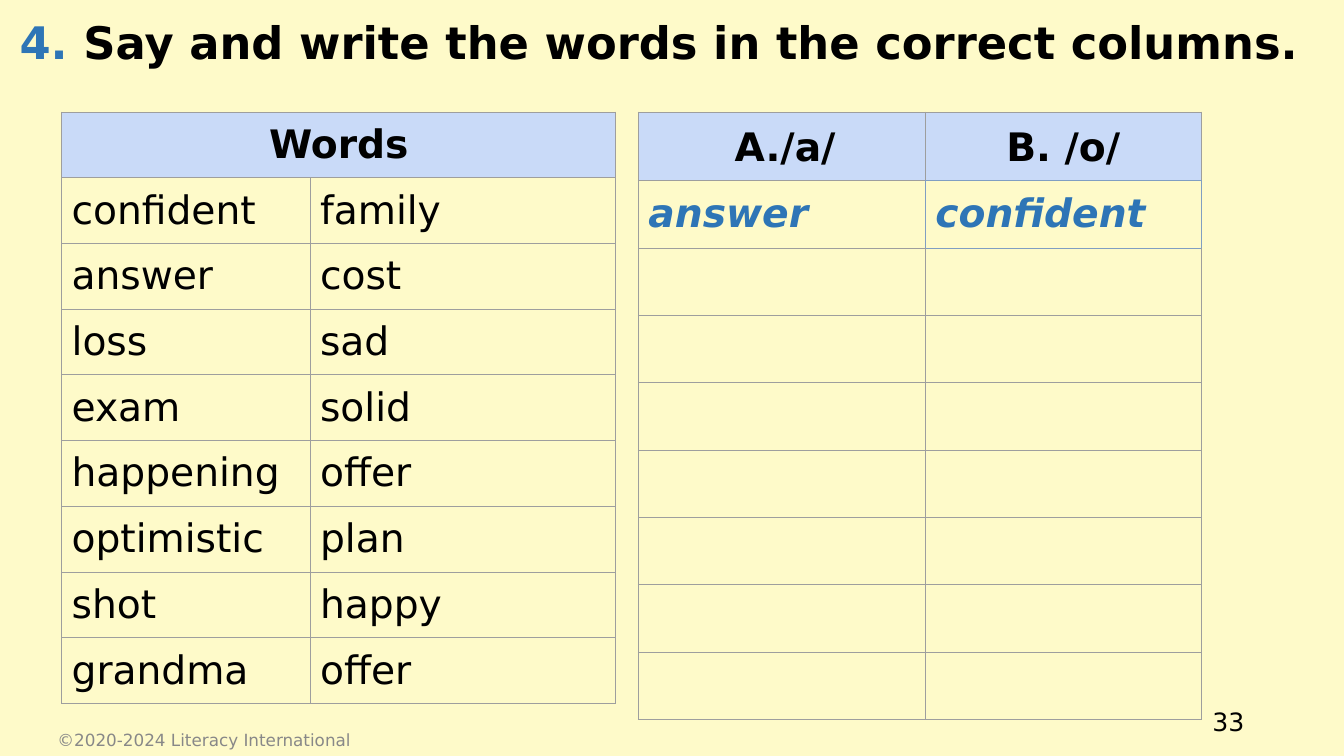
from lxml.etree import SubElement
from pptx import Presentation
from pptx.dml.color import RGBColor
from pptx.enum.text import MSO_ANCHOR as Anchor, MSO_AUTO_SIZE as AutoSize, PP_ALIGN as Align
from pptx.oxml.ns import qn
from pptx.util import Pt

TITLE = [("4. ", "accent"), ("Say and write the words in the correct columns.", "ink")]
WORDS = [
    ("Words", ""),
    ("confident", "family"),
    ("answer", "cost"),
    ("loss", "sad"),
    ("exam", "solid"),
    ("happening", "offer"),
    ("optimistic", "plan"),
    ("shot", "happy"),
    ("grandma", "offer"),
]
BLANK_ROWS = 7
ANSWERS = [("/a/", "B. /o/"), ("answer", "confident")] + [("", "")] * BLANK_ROWS
PAGE_NUMBER = "33"
COPYRIGHT = "©2020-2024 Literacy International"

FONT = "DejaVu Sans"
COLORS = {
    "background": "FEFAC9", "ink": "000000", "accent": "2E75B6", "header": "C9DAF8",
    "grid": "9E9E9E", "model_grid": "809EC2", "footer": "888888",
}
TABLES_TOP = 80
CELL_INSET = 7.2
MODEL_CELL = (1, 1)
EDGES = {"a:lnL": (0, -1), "a:lnR": (0, 1), "a:lnT": (-1, 0), "a:lnB": (1, 0)}


def rgb(name):
    return RGBColor.from_string(COLORS[name])


def style(paragraph, size, color=None, bold=False, italic=False, align=Align.LEFT):
    paragraph.alignment = align
    font = paragraph.font
    font.name, font.size, font.bold, font.italic = FONT, Pt(size), bold, italic
    if color:
        font.color.rgb = rgb(color)


def add_color(parent, name):
    SubElement(parent, qn("a:srgbClr"), val=COLORS[name])


def draw_borders(cell, position, model_cell):
    """Outline a cell; every edge of the model cell gets its own colour."""
    properties = cell._tc.get_or_add_tcPr()
    for tag, (down, right) in EDGES.items():
        neighbour = (position[0] + down, position[1] + right)
        line = SubElement(properties, qn(tag), w=str(Pt(0.75)))
        fill = SubElement(line, qn("a:solidFill"))
        add_color(fill, "model_grid" if model_cell in (position, neighbour) else "grid")


def number_with_letter(paragraph):
    properties = paragraph._p.get_or_add_pPr()
    properties.set("marL", str(Pt(36)))
    properties.set("indent", str(Pt(-31.5)))
    add_color(SubElement(properties, qn("a:buClr")), "ink")
    SubElement(properties, qn("a:buAutoNum"), type="alphaUcPeriod")


def add_grid(slide, rows, left, widths, row_height, model_cell=None):
    table = slide.shapes.add_table(
        len(rows), len(widths), Pt(left), Pt(TABLES_TOP),
        Pt(sum(widths)), Pt(row_height * len(rows))).table
    table.first_row = table.horz_banding = False
    for column, width in zip(table.columns, widths):
        column.width = Pt(width)
    for r, words in enumerate(rows):
        table.rows[r].height = Pt(row_height)
        for c, word in enumerate(words):
            cell = table.cell(r, c)
            cell.margin_left = cell.margin_right = Pt(CELL_INSET)
            cell.margin_top = cell.margin_bottom = Pt(CELL_INSET)
            draw_borders(cell, (r, c), model_cell)
            if r == 0:
                cell.fill.solid()
                cell.fill.fore_color.rgb = rgb("header")
            else:
                cell.fill.background()
            cell.text = word
    return table


def add_label(slide, text, box, size, color, align):
    frame = slide.shapes.add_textbox(*map(Pt, box)).text_frame
    frame.word_wrap = True
    frame.vertical_anchor = Anchor.MIDDLE
    frame.text = text
    style(frame.paragraphs[0], size, color, align=align)


def main():
    deck = Presentation()
    deck.slide_width, deck.slide_height = Pt(960), Pt(540)
    slide = deck.slides.add_slide(deck.slide_layouts[5])
    slide.background.fill.solid()
    slide.background.fill.fore_color.rgb = rgb("background")

    title = slide.shapes.title
    title.left, title.top, title.width, title.height = Pt(0), Pt(7.2), Pt(942), Pt(60)
    title.text_frame.auto_size = AutoSize.NONE
    title.text_frame.vertical_anchor = Anchor.TOP
    heading = title.text_frame.paragraphs[0]
    style(heading, 32, bold=True, align=Align.CENTER)
    for text, color in TITLE:
        run = heading.add_run()
        run.text = text
        run.font.color.rgb = rgb(color)

    words = add_grid(slide, WORDS, 44, (177.5, 218.5), 46.9)
    words.cell(0, 0).merge(words.cell(0, 1))
    answers = add_grid(slide, ANSWERS, 456, (205, 197), 48.1, MODEL_CELL)
    number_with_letter(answers.cell(0, 0).text_frame.paragraphs[0])
    for table in (words, answers):
        for r, row in enumerate(table.rows):
            for cell in row.cells:
                paragraph = cell.text_frame.paragraphs[0]
                if r == 0:
                    style(paragraph, 28, "ink", bold=True, align=Align.CENTER)
                elif table is answers:
                    style(paragraph, 28, "accent", bold=True, italic=True)
                else:
                    style(paragraph, 28, "ink")
    for cell in answers.rows[0].cells:
        cell.text_frame.paragraphs[0].line_spacing = 1.07

    add_label(slide, PAGE_NUMBER, (680, 500.5, 216, 29), 18, "ink", Align.RIGHT)
    add_label(slide, COPYRIGHT, (34, 514, 324, 29), 12, "footer", Align.LEFT)
    deck.save("out.pptx")


if __name__ == "__main__":
    main()
